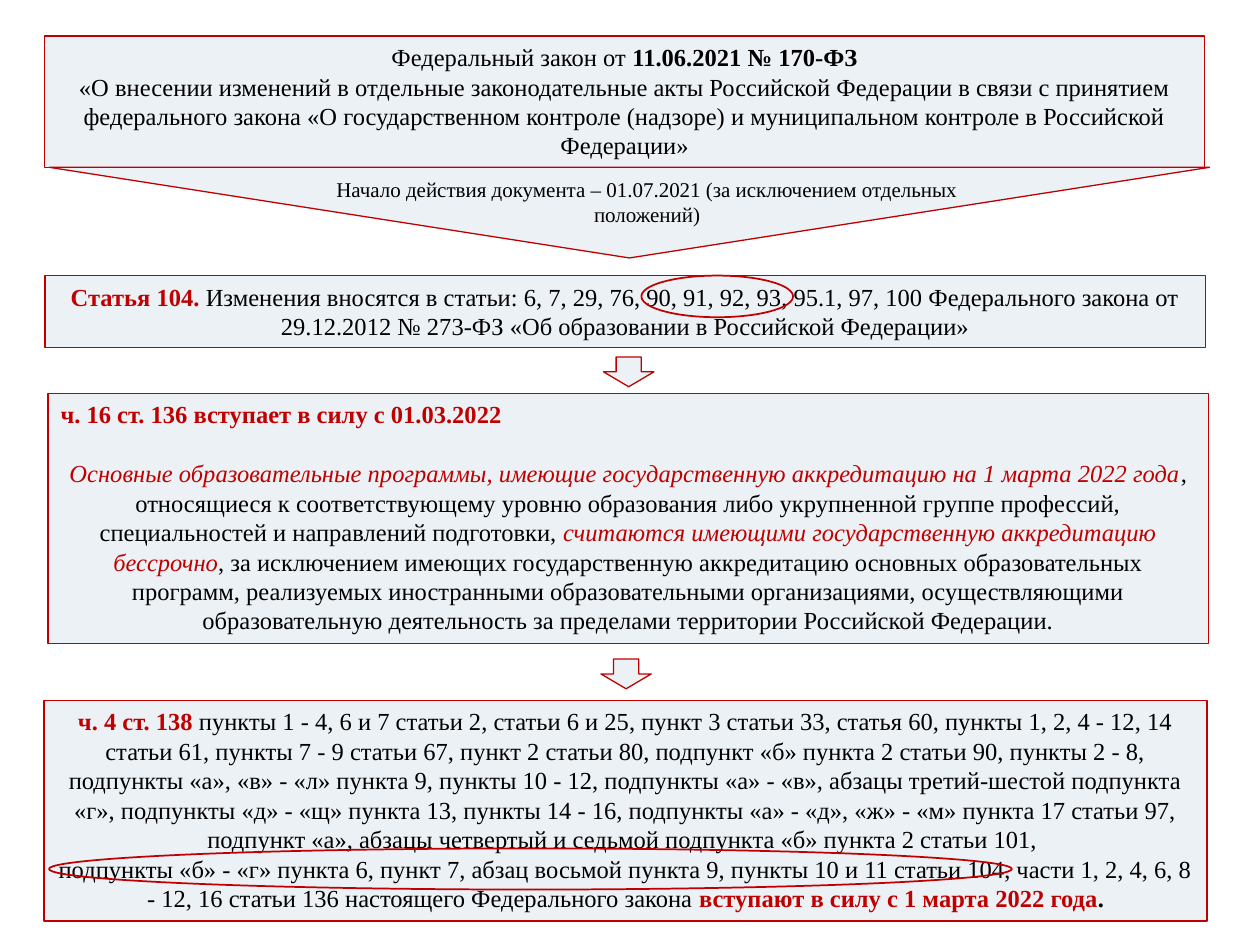
import pptx
import pptx.util
import pptx.dml.color
import pptx.enum.shapes
import pptx.enum.text
from dataclasses import dataclass

Pt = pptx.util.Pt
Rgb = pptx.dml.color.RGBColor
Kind = pptx.enum.shapes.MSO_SHAPE
Align = pptx.enum.text.PP_ALIGN
Fit = pptx.enum.text.MSO_AUTO_SIZE
Anchor = pptx.enum.text.MSO_ANCHOR


@dataclass
class Theme:
    font: str = "Times New Roman"
    body: float = 14
    small: float = 12
    gap: float = 16.8
    thin: float = 0.75
    ring: float = 1
    ink: Rgb = Rgb(0, 0, 0)
    red: Rgb = Rgb(0xC0, 0, 0)
    pale: Rgb = Rgb(0xEC, 0xF1, 0xF5)


class Page:
    def __init__(self, slide, theme):
        self.slide = slide
        self.theme = theme

    def shape(self, kind, spot):
        item = self.slide.shapes.add_shape(kind, *map(Pt, spot))
        item.shadow.inherit = False
        item.fill.solid()
        item.fill.fore_color.rgb = self.theme.pale
        item.line.color.rgb = self.theme.red
        item.line.width = Pt(self.theme.thin)
        return item

    def ring(self, spot):
        item = self.shape(Kind.OVAL, spot)
        item.fill.background()
        item.line.width = Pt(self.theme.ring)

    def fill(self, frame, paras, size):
        """Fill a frame with paragraphs, each a list of (text, marks).

        Marks: r for red, b for bold, i for italic.
        """
        frame.word_wrap = True
        frame.auto_size = Fit.SHAPE_TO_FIT_TEXT
        for n, parts in enumerate(paras):
            para = frame.add_paragraph() if n else frame.paragraphs[0]
            para.alignment = Align.CENTER
            for text, marks in parts:
                run = para.add_run()
                run.text = text
                font = run.font
                font.name = self.theme.font
                font.size = Pt(size)
                font.bold = "b" in marks
                font.italic = "i" in marks
                font.color.rgb = self.theme.red if "r" in marks else self.theme.ink

    def box(self, spot, *paras):
        item = self.shape(Kind.RECTANGLE, spot)
        frame = item.text_frame
        frame.vertical_anchor = Anchor.TOP
        self.fill(frame, paras, self.theme.body)
        return frame

    def label(self, spot, text):
        item = self.slide.shapes.add_textbox(*map(Pt, spot))
        self.fill(item.text_frame, [[(text, "")]], self.theme.small)


def main():
    deck = pptx.Presentation()
    deck.slide_width, deck.slide_height = Pt(720), Pt(540)
    theme = Theme()
    page = Page(deck.slides.add_slide(deck.slide_layouts[6]), theme)
    wide = 663

    page.box(
        (25.4, 20.6, wide, 75),
        [("Федеральный закон от ", ""), ("11.06.2021 № 170-ФЗ", "b")],
        [("«О внесении изменений в отдельные законодательные акты Российской "
          "Федерации в связи с принятием федерального закона «О государственном "
          "контроле (надзоре) и муниципальном контроле в Российской Федерации»", "")],
    )
    page.shape(Kind.FLOWCHART_MERGE, (28.2, 95.6, wide, 51.8))
    page.label((157, 97.2, 425.5, 36),
               "Начало действия документа – 01.07.2021 "
               "(за исключением отдельных положений)")

    page.box(
        (25.8, 157.5, wide, 41.2),
        [("Статья 104. ", "rb"),
         ("Изменения вносятся в статьи: 6, 7, 29, 76, 90, 91, 92, 93, 95.1, 97, "
          "100 Федерального закона от 29.12.2012 № 273-ФЗ «Об образовании в "
          "Российской Федерации»", "")],
    )

    terms = page.box(
        (27.5, 224.7, wide, 143),
        [("ч. 16 ст. 136 вступает в силу с 01.03.2022", "rb")],
        [("Основные образовательные программы, имеющие государственную "
          "аккредитацию на 1 марта 2022 года", "ri"),
         (", относящиеся к соответствующему уровню образования либо укрупненной "
          "группе профессий, специальностей и направлений подготовки, ", ""),
         ("считаются имеющими государственную аккредитацию бессрочно", "ri"),
         (", за исключением имеющих государственную аккредитацию основных "
          "образовательных программ, реализуемых иностранными образовательными "
          "организациями, осуществляющими образовательную деятельность за "
          "пределами территории Российской Федерации.", "")],
    )
    head = terms.paragraphs[0]
    head.alignment = Align.LEFT
    head.space_after = Pt(theme.gap)
    page.ring((366.5, 157.5, 86.7, 23.8))

    page.box(
        (25.2, 400.2, 664.6, 126.2),
        [("ч. 4 ст. 138 ", "rb"),
         ("пункты 1 - 4, 6 и 7 статьи 2, статьи 6 и 25, пункт 3 статьи 33, статья "
          "60, пункты 1, 2, 4 - 12, 14 статьи 61, пункты 7 - 9 статьи 67, пункт 2 "
          "статьи 80, подпункт «б» пункта 2 статьи 90, пункты 2 - 8, подпункты "
          "«а», «в» - «л» пункта 9, пункты 10 - 12, подпункты «а» - «в», абзацы "
          "третий-шестой подпункта «г», подпункты «д» - «щ» пункта 13, пункты "
          "14 - 16, подпункты «а» - «д», «ж» - «м» пункта 17 статьи 97, подпункт "
          "«а», абзацы четвертый и седьмой подпункта «б» пункта 2 статьи 101, ", "")],
        [("подпункты «б» - «г» пункта 6, пункт 7, абзац восьмой пункта 9, пункты "
          "10 и 11 статьи 104, части 1, 2, 4, 6, 8 - 12, 16 статьи 136 настоящего "
          "Федерального закона ", ""),
         ("вступают в силу с 1 марта 2022 года", "rb"), (".", "b")],
    )
    page.ring((28, 484.8, 550.2, 23.5))

    for left, top in ((344.9, 204), (343.4, 376.6)):
        page.shape(Kind.DOWN_ARROW, (left, top, 28.8, 17))

    deck.save("out.pptx")


if __name__ == "__main__":
    main()
